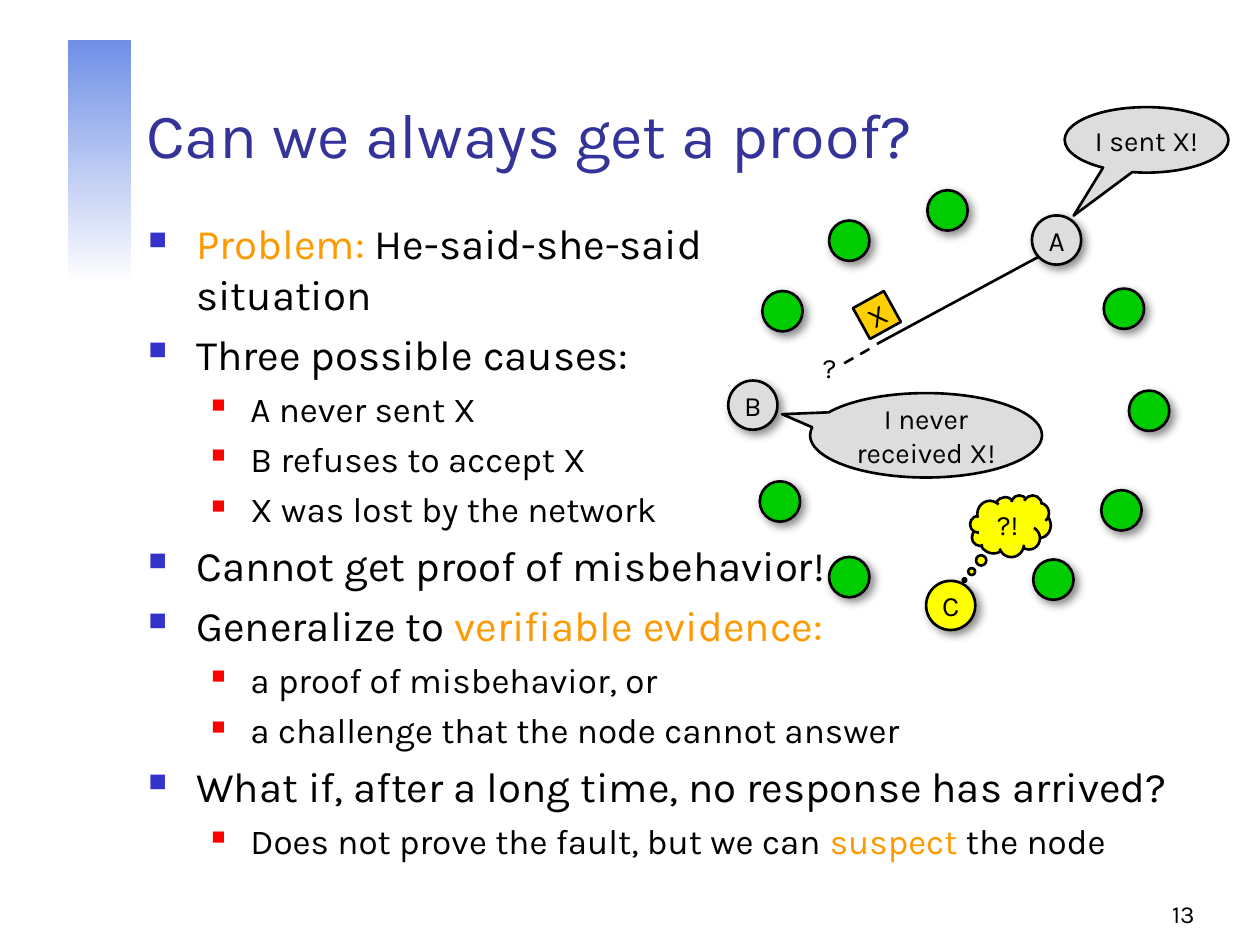
from lxml import etree
from pptx import Presentation
from pptx.dml.color import RGBColor
from pptx.enum.dml import MSO_LINE
from pptx.enum.shapes import MSO_CONNECTOR, MSO_SHAPE
from pptx.enum.text import MSO_ANCHOR, MSO_AUTO_SIZE, PP_ALIGN
from pptx.oxml.ns import qn
from pptx.util import Inches, Pt

FONT = "Karla"
COLORS = {
    "band": "708FE6", "white": "FFFFFF", "black": "000000",
    "title": "333399", "accent": "FF9900", "bullet": "3333CC",
    "sub_bullet": "FF0000", "correct": "00CC00", "suspect": "DDDDDD",
    "witness": "FFFF00", "message": "FFCF01", "shadow": "1C1C1C",
}
# Per level: text size, left margin, hanging indent, bullet colour, bullet %, space before
LEVELS = [
    (24, 0.38, 0.38, "bullet", 60, 5.6),
    (20, 0.81, 0.31, "sub_bullet", 55, 4.7),
]
# Per paragraph: level, then runs of (text, colour)
POINTS = [
    (0, [("Problem:", "accent"), (" He-said-she-said\vsituation", "black")]),
    (0, [("Three possible causes:", "black")]),
    (1, [("A never sent X", "black")]),
    (1, [("B refuses to accept X", "black")]),
    (1, [("X was lost by the network", "black")]),
    (0, [("Cannot get proof of misbehavior!", "black")]),
    (0, [("Generalize to ", "black"), ("verifiable evidence:", "accent")]),
    (1, [("a proof of misbehavior, or", "black")]),
    (1, [("a challenge that the node cannot answer", "black")]),
    (0, [("What if, after a long time, no response has arrived?", "black")]),
    (1, [("Does not prove the fault, but we can ", "black"),
         ("suspect", "accent"), (" the node", "black")]),
]
# Offsets and sizes inside the network box
CORRECT_NODES = [
    (1.66, 0.71), (3.06, 1.49), (3.26, 2.3), (3.04, 3.09), (2.5, 3.64),
    (0.88, 3.62), (0.33, 3.02), (0.35, 1.51), (0.88, 0.95),
]
NAMED_NODES = [
    ("A", 2.49, 0.91, "suspect"),
    ("B", 0.08, 2.22, "suspect"),
    ("C", 1.65, 3.81, "witness"),
]
CALLOUTS = [
    ("I sent X!", MSO_SHAPE.OVAL_CALLOUT, (2.75, 0.05, 1.3, 0.52), "suspect", (-0.445, 1.157)),
    ("I never\vreceived X!", MSO_SHAPE.OVAL_CALLOUT, (0.73, 2.32, 1.84, 0.67), "suspect",
     (-0.621, -0.25)),
    ("?!", MSO_SHAPE.CLOUD_CALLOUT, (2, 3.13, 0.64, 0.49), "witness", (-0.571, 0.875)),
]


def rgb(name):
    return RGBColor.from_string(COLORS[name])


def style_font(paragraph, size, color="black"):
    paragraph.font.name = FONT
    paragraph.font.size = Pt(size)
    paragraph.font.color.rgb = rgb(color)


def add_effects(element, shadow=False):
    """Give a shape or line its own effect list, empty or with an outer shadow."""
    effects = etree.SubElement(element.spPr, qn("a:effectLst"))
    if shadow:
        outer = etree.SubElement(effects, qn("a:outerShdw"), blurRad=str(Pt(5)),
                                 dist=str(Pt(3)), dir=str(45 * 60000))
        tint = etree.SubElement(outer, qn("a:srgbClr"), val=COLORS["shadow"])
        etree.SubElement(tint, qn("a:alpha"), val="50000")


def add_label(slide, box, text, size, align, anchor):
    label = slide.shapes.add_textbox(*map(Inches, box))
    frame = label.text_frame
    frame.word_wrap = True
    frame.vertical_anchor = anchor
    paragraph = frame.paragraphs[0]
    paragraph.text = text
    paragraph.alignment = align
    style_font(paragraph, size)


def add_figure(slide, kind, box, fill, text="", shadow=False):
    """Outlined shape with centred text that does not wrap."""
    figure = slide.shapes.add_shape(kind, *map(Inches, box))
    figure.fill.solid()
    figure.fill.fore_color.rgb = rgb(fill)
    figure.line.color.rgb = rgb("black")
    figure.line.width = Pt(1.5)
    add_effects(figure.element, shadow)
    if text:
        frame = figure.text_frame
        frame.word_wrap = False
        frame.vertical_anchor = MSO_ANCHOR.MIDDLE
        frame.margin_left = frame.margin_right = 0
        frame.margin_top = frame.margin_bottom = 0
        paragraph = frame.paragraphs[0]
        paragraph.text = text
        paragraph.alignment = PP_ALIGN.CENTER
        style_font(paragraph, 16)
    return figure


def add_line(slide, x1, y1, x2, y2, dash=None):
    line = slide.shapes.add_connector(MSO_CONNECTOR.STRAIGHT, *map(Inches, (x1, y1, x2, y2)))
    line.line.color.rgb = rgb("black")
    line.line.width = Pt(1.5)
    if dash:
        line.line.dash_style = dash
    add_effects(line.element)


def add_band(slide, box):
    band = slide.shapes.add_shape(MSO_SHAPE.RECTANGLE, *map(Inches, box))
    band.shadow.inherit = False
    band.line.fill.background()
    band.fill.gradient()
    band.fill.gradient_angle = 270
    for stop, position, color in zip(band.fill.gradient_stops, (0, 1), ("band", "white")):
        stop.position = position
        stop.color.rgb = rgb(color)


def set_title(slide, box, text):
    title = slide.shapes.title
    title.left, title.top, title.width, title.height = map(Inches, box)
    frame = title.text_frame
    frame.auto_size = MSO_AUTO_SIZE.NONE
    frame.vertical_anchor = MSO_ANCHOR.BOTTOM
    paragraph = frame.paragraphs[0]
    paragraph.text = text
    paragraph.alignment = PP_ALIGN.LEFT
    style_font(paragraph, 36, "title")


def add_bullet(paragraph, margin, hanging, color, percent):
    properties = paragraph._p.get_or_add_pPr()
    properties.set("marL", str(Inches(margin)))
    properties.set("indent", str(-Inches(hanging)))
    bullet_color = etree.SubElement(properties, qn("a:buClr"))
    etree.SubElement(bullet_color, qn("a:srgbClr"), val=COLORS[color])
    etree.SubElement(properties, qn("a:buSzPct"), val=str(percent * 1000))
    etree.SubElement(properties, qn("a:buChar"), char="■")


def add_points(slide, box):
    frame = slide.shapes.add_textbox(*map(Inches, box)).text_frame
    frame.word_wrap = True
    for index, (level, runs) in enumerate(POINTS):
        size, margin, hanging, bullet_color, percent, space = LEVELS[level]
        paragraph = frame.add_paragraph() if index else frame.paragraphs[0]
        paragraph.level = level
        add_bullet(paragraph, margin, hanging, bullet_color, percent)
        style_font(paragraph, size)
        if index:
            paragraph.space_before = Pt(space)
        for text, color in runs:
            for number, part in enumerate(text.split("\v")):
                if number:
                    paragraph.add_line_break()
                run = paragraph.add_run()
                run.text = part
                if color != "black":
                    run.font.color.rgb = rgb(color)


def add_network(slide, left, top):
    """Ring of nodes, the lost message X and what A, B and C say about it."""
    for x, y in CORRECT_NODES:
        add_figure(slide, MSO_SHAPE.OVAL, (left + x, top + y, 0.32, 0.32), "correct", shadow=True)
    for name, x, y, fill in NAMED_NODES:
        add_figure(slide, MSO_SHAPE.OVAL, (left + x, top + y, 0.39, 0.39), fill, name, shadow=True)
    add_line(slide, left + 2.54, top + 1.24, left + 1.26, top + 1.93)
    add_line(slide, left + 1.2, top + 1.97, left + 0.97, top + 2.1, MSO_LINE.DASH)
    message = add_figure(slide, MSO_SHAPE.RECTANGLE, (left + 1.12, top + 1.56, 0.28, 0.28),
                         "message", "X")
    message.rotation = 331.1
    add_label(slide, (left + 0.73, top + 1.93, 0.31, 0.37), "?", 16,
              PP_ALIGN.CENTER, MSO_ANCHOR.TOP)
    for text, kind, (x, y, width, height), fill, tail in CALLOUTS:
        callout = add_figure(slide, kind, (left + x, top + y, width, height), fill, text)
        callout.adjustments[0], callout.adjustments[1] = tail


def main():
    prs = Presentation()
    prs.slide_width, prs.slide_height = Inches(10), Inches(7.5)
    slide = prs.slides.add_slide(prs.slide_layouts[5])
    add_band(slide, (0.54, 0.32, 0.5, 1.93))
    set_title(slide, (1.06, 0.33, 8.52, 1.08), "Can we always get a proof?")
    add_points(slide, (1.08, 1.68, 8.64, 5.51))
    add_network(slide, 5.7, 0.8)
    add_label(slide, (7.5, 6.92, 2.08, 0.5), "13", 14, PP_ALIGN.RIGHT, MSO_ANCHOR.BOTTOM)
    prs.save("out.pptx")


if __name__ == "__main__":
    main()
